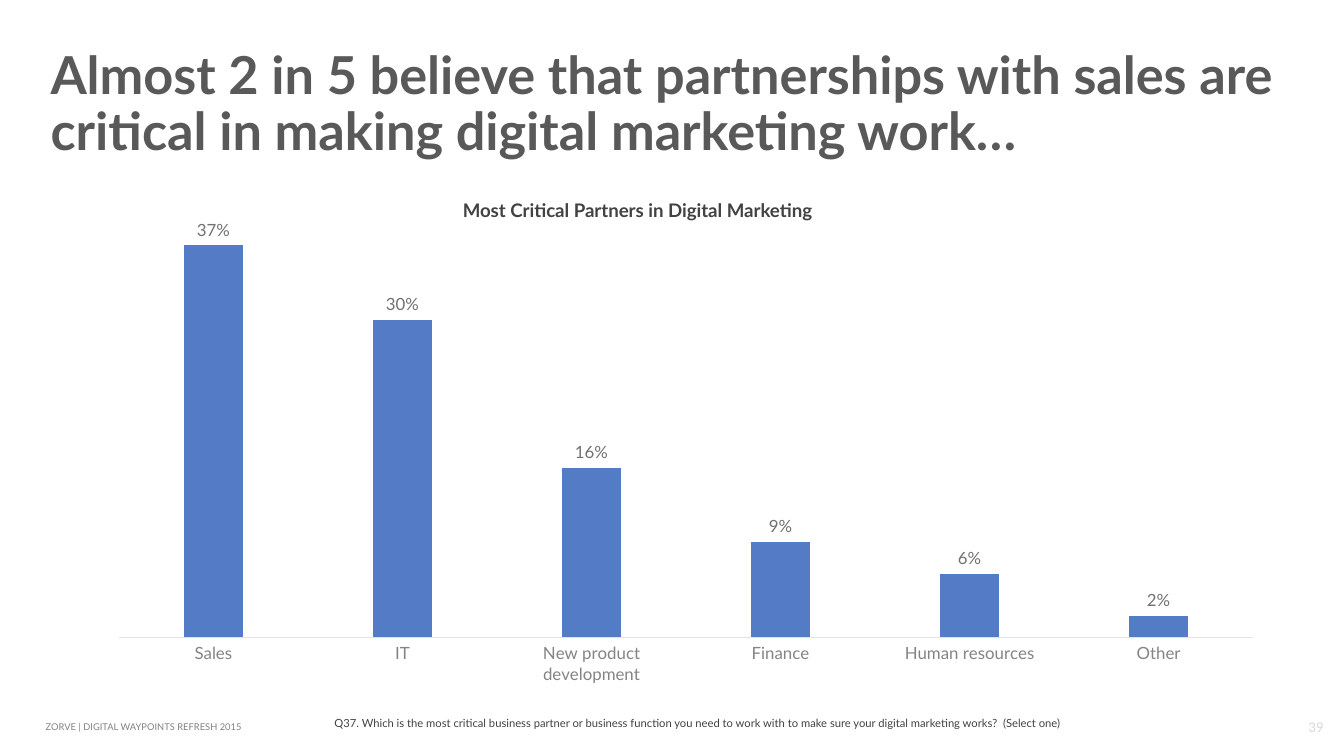
from lxml import etree
from pptx import Presentation
from pptx.chart.data import CategoryChartData
from pptx.dml.color import RGBColor
from pptx.enum import chart as charts, text
from pptx.oxml import ns
from pptx.util import Pt

COLORS = {
    "title": "595959",
    "body": "424242",
    "footer": "808080",
    "page": "D9D9D9",
    "bar": "547BC5",
    "value": "717171",
    "category": "848484",
    "axis": "E3E3E3",
}
PARTNERS = {
    "Sales": 0.37,
    "IT": 0.30,
    "New product development": 0.16,
    "Finance": 0.09,
    "Human resources": 0.06,
    "Other": 0.02,
}
# Inner plot area, as fractions of the chart
PLOT_AREA = {"x": 0.02, "y": 0.03, "w": 0.96, "h": 0.85}
MIDDLE = text.MSO_ANCHOR.MIDDLE
CENTER = text.PP_ALIGN.CENTER


def style_font(font, size, color, name="Lato", bold=False):
    font.name = name
    font.size = Pt(size)
    font.bold = bold
    font.color.rgb = RGBColor.from_string(COLORS[color])


def add_text(slide, box, words, size, color, name="Lato", bold=False, align=None,
             anchor=text.MSO_ANCHOR.TOP, margins=(0, 0), spacing=None):
    """Margins are horizontal, then vertical."""
    frame = slide.shapes.add_textbox(*map(Pt, box)).text_frame
    frame.word_wrap = True
    frame.vertical_anchor = anchor
    frame.margin_left = frame.margin_right = Pt(margins[0])
    frame.margin_top = frame.margin_bottom = Pt(margins[1])
    frame.text = words
    paragraph = frame.paragraphs[0]
    paragraph.alignment = align
    paragraph.line_spacing = spacing
    style_font(paragraph.runs[0].font, size, color, name, bold)


def fix_plot_area(chart):
    plot_area = chart.element.find(".//" + ns.qn("c:plotArea"))
    layout = plot_area.find(ns.qn("c:layout"))
    if layout is None:
        layout = etree.Element(ns.qn("c:layout"))
        plot_area.insert(0, layout)
    manual = etree.SubElement(layout, ns.qn("c:manualLayout"))
    settings = {"layoutTarget": "inner", "xMode": "edge", "yMode": "edge", **PLOT_AREA}
    for tag, value in settings.items():
        etree.SubElement(manual, ns.qn("c:" + tag)).set("val", str(value))


def add_partner_chart(slide, left, top, width, height):
    data = CategoryChartData(number_format="0%")
    data.categories = list(PARTNERS)
    data.add_series("Series 1", list(PARTNERS.values()))
    chart = slide.shapes.add_chart(
        charts.XL_CHART_TYPE.COLUMN_CLUSTERED,
        Pt(left), Pt(top), Pt(width), Pt(height), data).chart
    chart.has_title = False
    chart.has_legend = False
    style_font(chart.font, 10, "body", "Cabin")
    fix_plot_area(chart)

    plot = chart.plots[0]
    plot.gap_width = 219
    plot.overlap = -27
    plot.vary_by_categories = False
    fill = plot.series[0].format.fill
    fill.solid()
    fill.fore_color.rgb = RGBColor.from_string(COLORS["bar"])

    plot.has_data_labels = True
    labels = plot.data_labels
    labels.show_value = True
    labels.number_format = "0%"
    labels.number_format_is_linked = False
    labels.position = charts.XL_LABEL_POSITION.OUTSIDE_END
    style_font(labels.font, 9, "value")

    category_axis = chart.category_axis
    category_axis.major_tick_mark = charts.XL_TICK_MARK.NONE
    category_axis.format.line.width = Pt(0.75)
    category_axis.format.line.color.rgb = RGBColor.from_string(COLORS["axis"])
    style_font(category_axis.tick_labels.font, 9, "category")

    value_axis = chart.value_axis
    value_axis.minimum_scale = 0
    value_axis.maximum_scale = 0.4
    value_axis.has_major_gridlines = False
    value_axis.visible = False


def add_chart_region(slide, left, top, width, height):
    add_partner_chart(slide, left, top, width, height)
    add_text(slide, (left, top, width - 52, 12),
             "Most Critical Partners in Digital Marketing",
             10, "body", bold=True, align=CENTER)


def add_footer(slide, left, top, width, height):
    add_text(slide, (left, top + 6.5, 300, 6), "ZORVE | DIGITAL WAYPOINTS REFRESH 2015",
             5, "footer", anchor=MIDDLE)
    add_text(slide, (left + 147.6, top, 433.4, 14.4),
             "Q37. Which is the most critical business partner or business function you need "
             "to work with to make sure your digital marketing works?  (Select one)",
             6, "body", margins=(7.2, 3.6))
    add_text(slide, (left + width - 20, top + height - 10, 20, 10), "39", 8, "page", "Calibri",
             align=CENTER, anchor=text.MSO_ANCHOR.BOTTOM)


def main():
    presentation = Presentation()
    presentation.slide_width = Pt(720)
    presentation.slide_height = Pt(405)
    slide = presentation.slides.add_slide(presentation.slide_layouts[6])
    add_text(slide, (20, 22.3, 684, 68.4),
             "Almost 2 in 5 believe that partnerships with sales are critical "
             "in making digital marketing work…",
             28, "title", bold=True, anchor=MIDDLE, margins=(7.2, 3.6), spacing=0.9)
    add_chart_region(slide, 51, 106.5, 633, 267)
    add_footer(slide, 24.5, 380, 690.5, 14)
    presentation.save("out.pptx")


if __name__ == "__main__":
    main()
